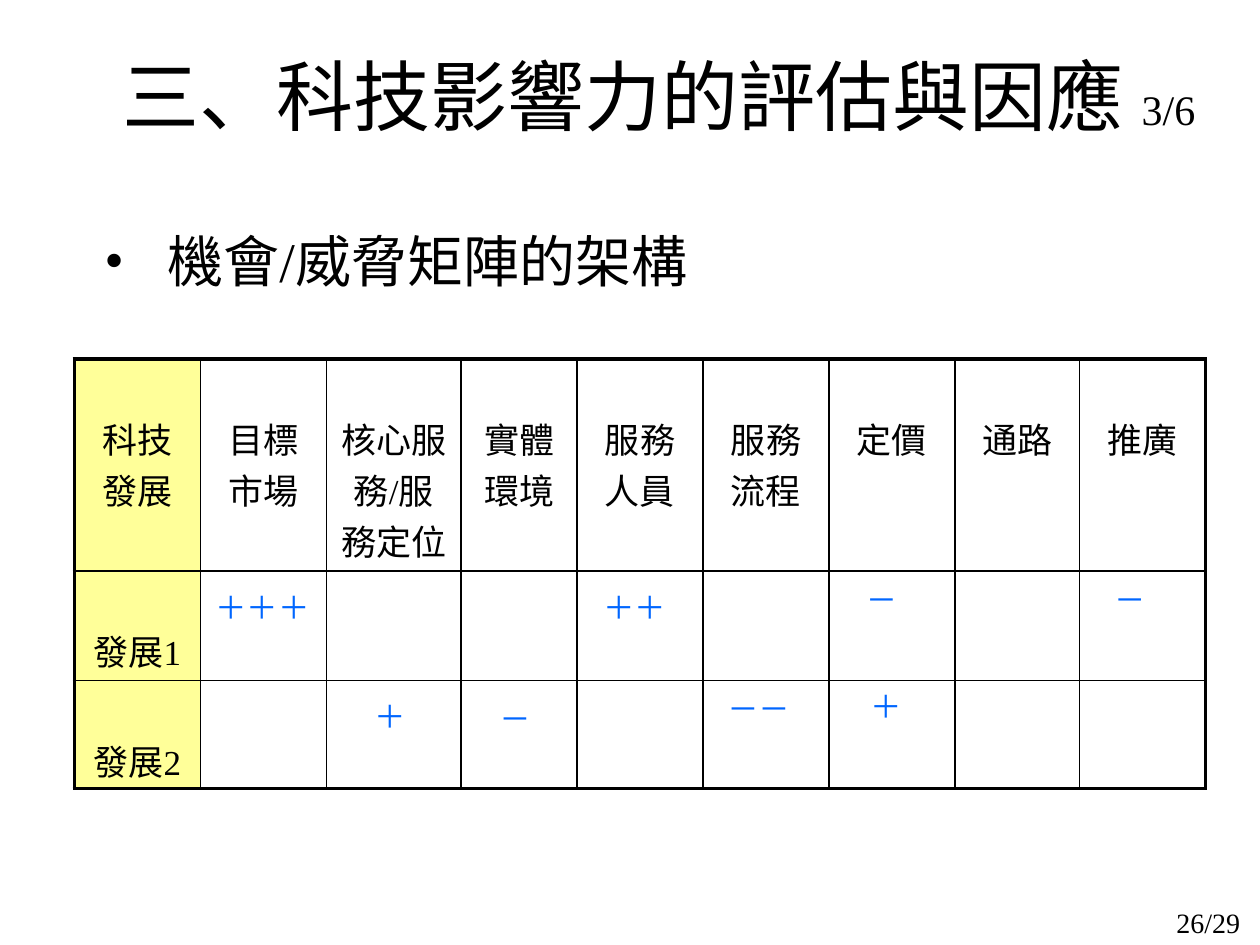
"""Build the opportunity and threat matrix slide."""
from lxml.etree import SubElement
from pptx import Presentation
from pptx.dml.color import RGBColor as Rgb
from pptx.enum.text import MSO_ANCHOR as Anchor, MSO_AUTO_SIZE as Fit, PP_ALIGN as Align
from pptx.oxml.ns import qn
from pptx.util import Inches, Pt

THEME = {
    "ink": Rgb.from_string("000000"),
    "mark": Rgb.from_string("0066FF"),
    "head": Rgb.from_string("FFFF99"),
    "serif": "Times New Roman",
    "sans": "Arial",
    "title": Pt(44),
    "part": Pt(24),
    "body": Pt(32),
    "cell": Pt(20),
    "sign": Pt(18),
    "number": Pt(16),
    "outer": Pt(2.25),
    "inner": Pt(1),
}
COLUMNS = [1, 1, 1.07, 0.92, 1, 1, 1, 0.99, 1]
ROWS = [1.68, 0.87, 0.86]
LEFT, TOP = 0.59, 2.85
HEADINGS = ["科技發展", "目標市場", "核心服務/服務定位", "實體環境", "服務人員",
            "服務流程", "定價", "通路", "推廣"]
GRID = [HEADINGS, ["發展1"] + [""] * 8, ["發展2"] + [""] * 8]
MARKS = [
    ("＋＋＋", 1, 1, 0.02, 0.09, 0.95),
    ("＋＋", 1, 4, 0.11, 0.09, 0.7),
    ("─", 1, 6, 0.23, 0.01, 0.45),
    ("─", 1, 8, 0.21, 0.01, 0.45),
    ("＋", 2, 2, 0.28, 0.08, 0.45),
    ("─", 2, 3, 0.24, 0.08, 0.45),
    ("─ ─", 2, 5, 0.13, 0, 0.77),
    ("＋", 2, 6, 0.23, 0, 0.45),
]


def write(para, text, size, font="serif", color="ink"):
    """Add a formatted span to a paragraph."""
    span = para.add_run()
    span.text = text
    look = {"size": THEME[size], "name": THEME[font], "bold": False}
    for key, value in look.items():
        setattr(span.font, key, value)
    span.font.color.rgb = THEME[color]


def add_box(left, top, width, height, wrap=True):
    """Add a text box and return its first paragraph."""
    box = slide.shapes.add_textbox(*map(Inches, (left, top, width, height)))
    box.text_frame.word_wrap = wrap
    return box.text_frame.paragraphs[0]


deck = Presentation()
deck.slide_width, deck.slide_height = Inches(10), Inches(7.5)
slide = deck.slides.add_slide(deck.slide_layouts[5])

para = add_box(9.1, 7.14, 0.84, 0.32)
para.alignment = Align.RIGHT
write(para, "26/29", "number")

title = slide.shapes.title
place = {"left": 0.73, "top": 0.13, "width": 9, "height": 1.25}
for key, value in place.items():
    setattr(title, key, Inches(value))
title.text_frame.auto_size = Fit.NONE
title.text_frame.vertical_anchor = Anchor.MIDDLE
para = title.text_frame.paragraphs[0]
para.alignment = Align.CENTER
write(para, "三、科技影響力的評估與因應 ", "title")
write(para, "3/6", "part")

para = add_box(0.73, 1.75, 9, 1.13)
props = para._p.get_or_add_pPr()
props.set("marL", str(Inches(0.5)))
props.set("indent", str(-Inches(0.5)))
SubElement(props, qn("a:buFont"), typeface=THEME["serif"])
SubElement(props, qn("a:buChar"), char="•")
write(para, "機會/威脅矩陣的架構", "body")

frame = slide.shapes.add_table(len(ROWS), len(COLUMNS), Inches(LEFT), Inches(TOP),
                               Inches(sum(COLUMNS)), Inches(sum(ROWS)))
table = frame.table
for column, width in zip(table.columns, COLUMNS):
    column.width = Inches(width)
for row, height in zip(table.rows, ROWS):
    row.height = Inches(height)

margins = {"margin_left": 0.1, "margin_right": 0.1, "margin_top": 0.43, "margin_bottom": 0.02}
for r, texts in enumerate(GRID):
    for c, text in enumerate(texts):
        cell = table.cell(r, c)
        for key, value in margins.items():
            setattr(cell, key, Inches(value))
        para = cell.text_frame.paragraphs[0]
        para.alignment = Align.CENTER
        if text:
            write(para, text, "cell")
        else:
            para.font.size = THEME["sign"]
        edges = {"L": c == 0, "R": c == len(COLUMNS) - 1, "T": r == 0, "B": r == len(ROWS) - 1}
        props = cell._tc.get_or_add_tcPr()
        for side, outer in edges.items():
            width = THEME["outer" if outer else "inner"]
            line = SubElement(props, qn(f"a:ln{side}"), w=str(width))
            fill = SubElement(line, qn("a:solidFill"))
            SubElement(fill, qn("a:srgbClr"), val=str(THEME["ink"]))
        if c == 0:
            cell.fill.solid()
            cell.fill.fore_color.rgb = THEME["head"]
        else:
            cell.fill.background()

for text, r, c, right, down, width in MARKS:
    left = LEFT + sum(COLUMNS[:c]) + right
    top = TOP + sum(ROWS[:r]) + down
    write(add_box(left, top, width, 0.4, wrap=False), text, "sign", "sans", "mark")

deck.save("out.pptx")
